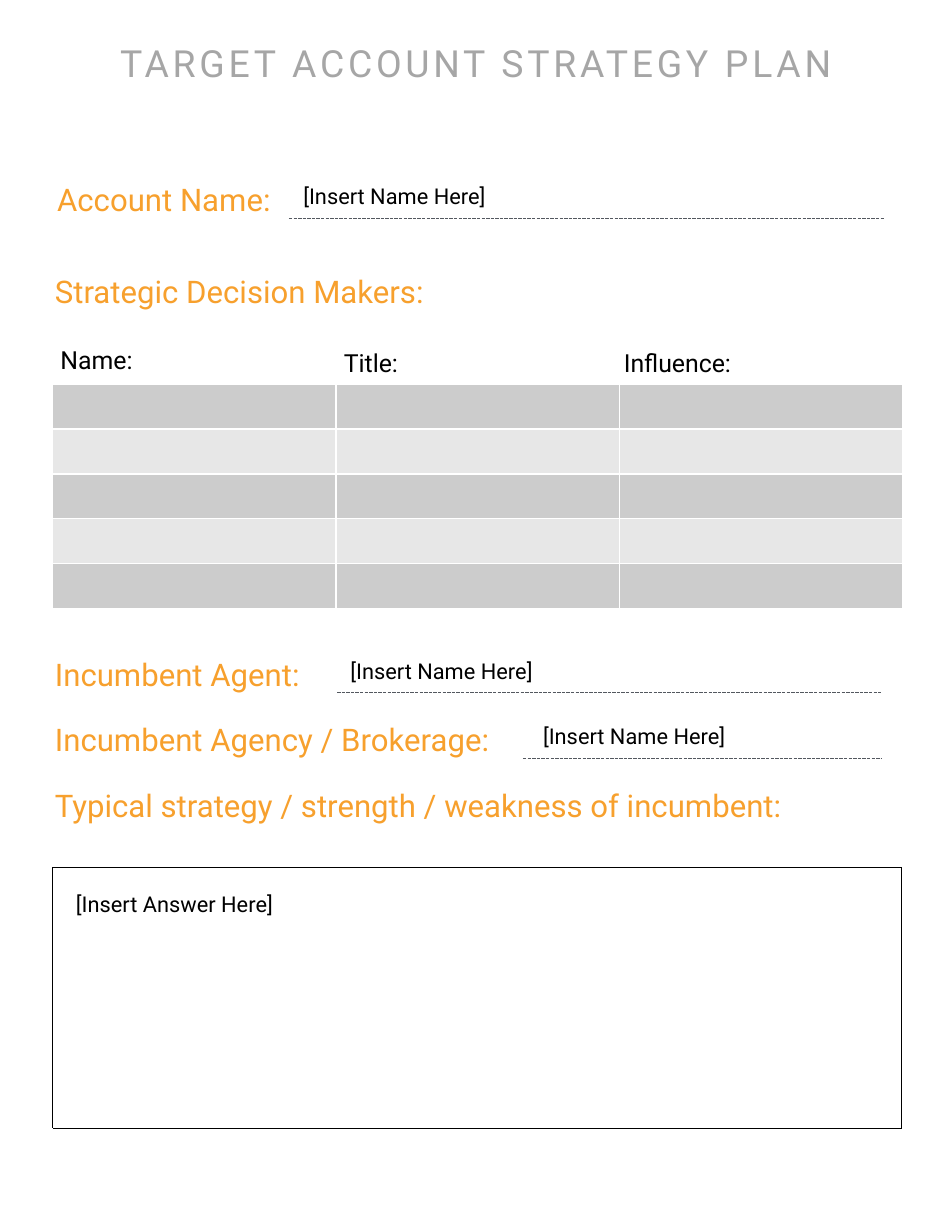
from lxml import etree
from pptx import Presentation
from pptx.dml.color import RGBColor
from pptx.enum.dml import MSO_LINE
from pptx.enum.shapes import MSO_CONNECTOR, MSO_SHAPE
from pptx.enum.text import PP_ALIGN
from pptx.oxml import parse_xml
from pptx.oxml.ns import nsdecls, qn
from pptx.util import Inches, Pt

ORANGE = RGBColor(0xF7, 0xA0, 0x2D)
TITLE_GRAY = RGBColor(0xA6, 0xA6, 0xA6)
RULE_GRAY = RGBColor(0x53, 0x58, 0x5F)
DARK_ROW = RGBColor(0xCC, 0xCC, 0xCC)
LIGHT_ROW = RGBColor(0xE7, 0xE7, 0xE7)
BLACK = RGBColor(0, 0, 0)

prs = Presentation()
prs.slide_width, prs.slide_height = Inches(8.5), Inches(11)
slide = prs.slides.add_slide(prs.slide_layouts[6])


def add_text(text, left, top, width, height=0.4, size=20, color=ORANGE,
             inset=(0.07, 0.03), align=PP_ALIGN.LEFT, spacing=None):
    """Add a one-line text box; spacing is letter spacing in points."""
    box = slide.shapes.add_textbox(Inches(left), Inches(top), Inches(width), Inches(height))
    frame = box.text_frame
    frame.word_wrap = True
    frame.margin_left = frame.margin_right = Inches(inset[0])
    frame.margin_top = frame.margin_bottom = Inches(inset[1])
    paragraph = frame.paragraphs[0]
    paragraph.alignment = align
    run = paragraph.add_run()
    run.text = text
    run.font.name = "Roboto"
    run.font.size = Pt(size)
    run.font.color.rgb = color
    if spacing:
        run.font._element.set("spc", str(round(spacing * 100)))


add_text("TARGET ACCOUNT STRATEGY PLAN", 0.44, 0.33, 7.62, 0.47, size=24,
         color=TITLE_GRAY, align=PP_ALIGN.CENTER, spacing=2.4)

# Section headings
for heading, left, top, width in [
    ("Account Name:", 0.44, 1.58, 2.11),
    ("Strategic Decision Makers:", 0.42, 2.4, 3.78),
    ("Incumbent Agent:", 0.42, 5.82, 2.48),
    ("Incumbent Agency / Brokerage:", 0.42, 6.4, 4.48),
    ("Typical strategy / strength / weakness of incumbent:", 0.42, 6.99, 7.45),
]:
    add_text(heading, left, top, width)

# Answers
for answer, left, top, width in [
    ("[Insert Name Here]", 2.61, 1.58, 4.56),
    ("[Insert Name Here]", 3.03, 5.82, 4.56),
    ("[Insert Name Here]", 4.75, 6.4, 2.72),
    ("[Insert Answer Here]", 0.58, 7.9, 7.23),
]:
    add_text(answer, left, top, width, 0.34, size=14, color=BLACK, inset=(0.1, 0.05))

# Dotted rules under the name answers
for start, end, y in [(2.58, 7.89, 1.95), (3.01, 7.87, 6.18), (4.67, 7.87, 6.77)]:
    rule = slide.shapes.add_connector(MSO_CONNECTOR.STRAIGHT, Inches(start), Inches(y),
                                      Inches(end), Inches(y))
    rule.line.color.rgb = RULE_GRAY
    rule.line.width = Pt(0.75)
    rule.line.dash_style = MSO_LINE.SQUARE_DOT
    etree.SubElement(rule._element.spPr, qn("a:effectLst"))

# Decision makers table
for column, left, top, width in [
    ("Name:", 0.47, 3.05, 1.08),
    ("Title:", 3, 3.07, 1.08),
    ("Influence:", 5.5, 3.07, 1.33),
]:
    add_text(column, left, top, width, 0.34, size=16, color=BLACK)

decision_makers = slide.shapes.add_table(5, 3, Inches(0.47), Inches(3.43),
                                         Inches(7.59), Inches(2)).table
decision_makers.first_row = False
decision_makers.horz_banding = False
for row_number, row in enumerate(decision_makers.rows):
    for cell in row.cells:
        for side in ("lnL", "lnR", "lnT", "lnB"):
            cell._tc.get_or_add_tcPr().append(parse_xml(
                f'<a:{side} {nsdecls("a")} w="12700"><a:solidFill>'
                f'<a:srgbClr val="FFFFFF"/></a:solidFill></a:{side}>'))
        cell.fill.solid()
        cell.fill.fore_color.rgb = LIGHT_ROW if row_number % 2 else DARK_ROW

answer_frame = slide.shapes.add_shape(MSO_SHAPE.RECTANGLE, Inches(0.47), Inches(7.74),
                                      Inches(7.58), Inches(2.33))
answer_frame.shadow.inherit = False
answer_frame.fill.background()
answer_frame.line.color.rgb = BLACK
answer_frame.line.width = Pt(0.25)
answer_frame.line.dash_style = MSO_LINE.ROUND_DOT

prs.save("out.pptx")
